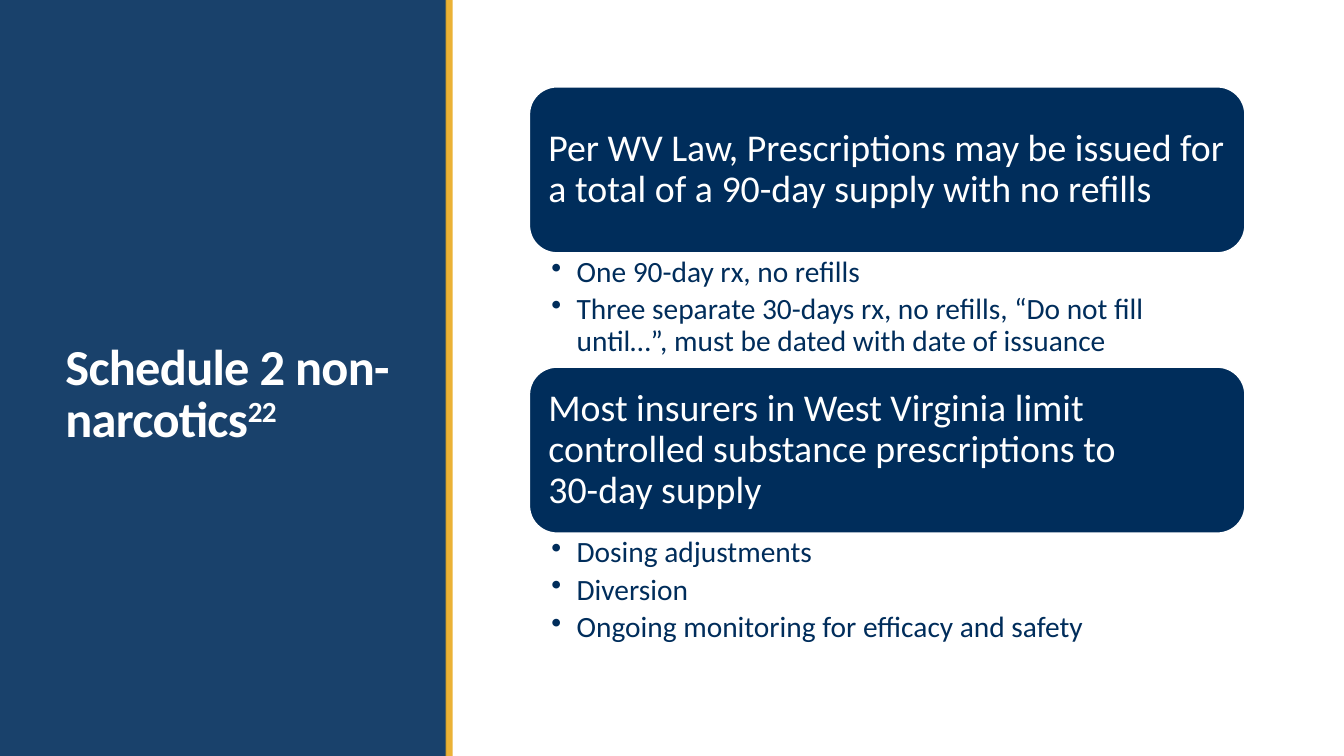
from pptx import Presentation
from pptx.dml.color import RGBColor
from pptx.enum.shapes import MSO_SHAPE
from pptx.enum.text import MSO_ANCHOR, PP_ALIGN
from pptx.oxml.ns import qn
from pptx.util import Inches, Pt
from lxml.etree import SubElement

WIDE, HIGH = Inches(13.33), Inches(7.5)
COL, ROW = WIDE / 100, HIGH / 100
NAVY, GOLD, WHITE = "002D5B", "E9AA21", "FFFFFF"
PITCH, HEAD = 37.07, 22
TITLE = {"size": Pt(36), "bold": True}
LEAD = {"size": Pt(27), "bold": False}
ITEM = {"size": Pt(21), "bold": False}
TOPICS = [
    (["Per WV Law, Prescriptions may be issued for a total of a 90-day supply with no refills"],
     ["One 90-day rx, no refills",
      "Three separate 30-days rx, no refills, “Do not fill until…”, must be dated with date of issuance"]),
    (["Most insurers in West Virginia limit controlled substance prescriptions to",
      "30-day supply"],
     ["Dosing adjustments", "Diversion", "Ongoing monitoring for efficacy and safety"]),
]


def paint(part, code):
    """Give a fill or font colour a hex colour."""
    part.rgb = RGBColor.from_string(code)


def apply(thing, form):
    """Set every attribute named in a format dict."""
    for name, value in form.items():
        setattr(thing, name, value)


def span(box):
    """Turn a box in columns and rows into lengths."""
    x, y, w, h = box
    return [int(n) for n in (x * COL, y * ROW, w * COL, h * ROW)]


def block(slide, kind, box, code, alpha=None):
    """Draw a filled shape without shadow or line."""
    shape = slide.shapes.add_shape(kind, *span(box))
    shape.shadow.inherit = False
    shape.fill.solid()
    paint(shape.fill.fore_color, code)
    shape.line.fill.background()
    if alpha:
        tone = shape.fill._xPr.find(qn("a:solidFill"))[0]
        SubElement(tone, qn("a:alpha")).set("val", str(alpha * 1000))
    return shape


def setup(frame, anchor, sides, ends):
    """Set wrapping, anchor and insets of a text frame."""
    apply(frame, {"word_wrap": True, "vertical_anchor": anchor,
                  "margin_left": Inches(sides), "margin_right": Inches(sides),
                  "margin_top": Inches(ends), "margin_bottom": Inches(ends)})


def write(para, text, form, code):
    """Add a run in the given format and colour."""
    run = para.add_run()
    run.text = text
    apply(run.font, {"name": "Calibri", **form})
    paint(run.font.color, code)
    return run._r.get_or_add_rPr()


def panel(slide, box):
    """Draw the side panel with its gold edge and title."""
    x, y, w, h = box
    block(slide, MSO_SHAPE.RECTANGLE, box, NAVY, 90)
    block(slide, MSO_SHAPE.RECTANGLE, (x + w - 0.07, y, 0.53, h), GOLD, 90)
    area = (x + 4.13, y + 7.47, w - 6.9, 52.4)
    frame = slide.shapes.add_textbox(*span(area)).text_frame
    setup(frame, MSO_ANCHOR.BOTTOM, 0.1, 0.05)
    para = frame.paragraphs[0]
    para.line_spacing = 0.85
    for text, raised in (("Schedule 2 non-narcotics", 0), ("22", 30000)):
        look = write(para, text, TITLE, WHITE)
        look.set("spc", "-50")
        if raised:
            look.set("baseline", str(raised))


def banner(slide, box, lines):
    """Draw a rounded banner holding its statement."""
    shape = block(slide, MSO_SHAPE.ROUNDED_RECTANGLE, box, NAVY)
    paint(shape.line.color, WHITE)
    shape.line.width = Pt(1.25)
    setup(shape.text_frame, MSO_ANCHOR.MIDDLE, 0.11, 0.11)
    para = shape.text_frame.paragraphs[0]
    apply(para, {"alignment": PP_ALIGN.LEFT, "line_spacing": 0.9})
    for i, line in enumerate(lines):
        if i:
            para.add_line_break()
        write(para, line, LEAD, WHITE)


def points(slide, box, items):
    """Write the bulleted items below a banner."""
    frame = slide.shapes.add_textbox(*span(box)).text_frame
    setup(frame, MSO_ANCHOR.TOP, 0.22, 0.04)
    for i, item in enumerate(items):
        para = frame.add_paragraph() if i else frame.paragraphs[0]
        apply(para, {"line_spacing": 0.9, "space_after": Pt(4)})
        props = para._p.get_or_add_pPr()
        props.set("marL", str(Inches(0.25)))
        props.set("indent", str(-Inches(0.25)))
        SubElement(props, qn("a:buChar")).set("char", "•")
        write(para, item, ITEM, NAVY)


def topics(slide, box):
    """Stack the banners and their points down the box."""
    x, y, w, h = box
    for i, (lines, items) in enumerate(TOPICS):
        top = y + i * PITCH
        banner(slide, (x, top, w, HEAD), lines)
        points(slide, (x, top + HEAD, w, PITCH - HEAD), items)


def main():
    """Build and save the slide."""
    deck = Presentation()
    apply(deck, {"slide_width": WIDE, "slide_height": HIGH})
    slide = deck.slides.add_slide(deck.slide_layouts[6])
    panel(slide, (0, 0, 33.23, 100))
    topics(slide, (39.38, 11.47, 53.26, 2 * PITCH))
    deck.save("out.pptx")


if __name__ == "__main__":
    main()
